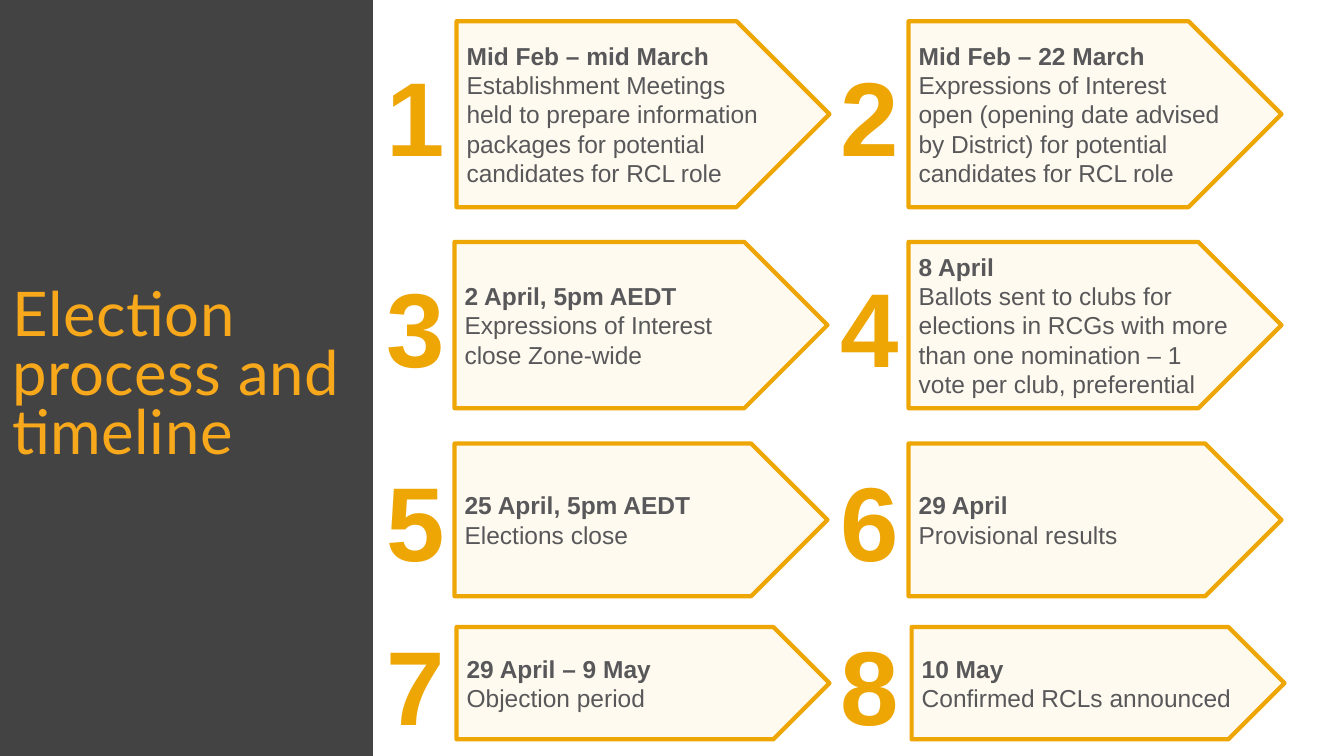
from dataclasses import dataclass

import pptx
import pptx.dml.color
import pptx.enum.shapes
import pptx.enum.text
import pptx.util

Inches = pptx.util.Inches
Align = pptx.enum.text.PP_ALIGN
Shape = pptx.enum.shapes.MSO_SHAPE


def rgb(code):
    return pptx.dml.color.RGBColor.from_string(code)


@dataclass(frozen=True)
class Theme:
    panel: str = "434343"
    title: str = "F7A81B"
    accent: str = "EEA604"
    arrow_fill: str = "FFFAEF"
    text: str = "58585A"
    title_font: str = "Lato"
    body_font: str = "Arial"
    title_size: int = 88
    number_size: int = 150
    body_size: int = 35
    outline: int = 6


@dataclass(frozen=True)
class Box:
    left: float
    top: float
    width: float
    height: float

    def lengths(self):
        return [Inches(n) for n in (self.left, self.top, self.width, self.height)]


@dataclass(frozen=True)
class Step:
    date: str
    detail: str
    indent: float = 1.56
    tracking: int = 0


THEME = Theme()
SLIDE_WIDTH, SLIDE_HEIGHT = 26.67, 15
PANEL_WIDTH = 7.4
ARROW_WIDTH = 7.4
NUMBER_WIDTH, NUMBER_HEIGHT = 1.57, 2.64
COLUMN_LEFTS = (7.46, 16.47)
ROWS = ((0.42, 3.69), (4.8, 3.3), (8.8, 3.03), (12.44, 2.23))  # top, height
STEPS = (
    Step("Mid Feb – mid March",
         "Establishment Meetings held to prepare information packages "
         "for potential candidates for RCL role", 1.6, -10),
    Step("Mid Feb – 22 March",
         "Expressions of Interest open (opening date advised by District) "
         "for potential candidates for RCL role", tracking=-10),
    Step("2 April, 5pm AEDT",
         "Expressions of Interest close Zone-wide", tracking=-10),
    Step("8 April",
         "Ballots sent to clubs for elections in RCGs with more than one "
         "nomination – 1 vote per club, preferential"),
    Step("25 April, 5pm AEDT", "Elections close"),
    Step("29 April", "Provisional results"),
    Step("29 April – 9 May", "Objection period", 1.6),
    Step("10 May", "Confirmed RCLs announced", 1.62),
)


def set_frame(frame, side, end):
    """Wrap and centre the text vertically, with side and top/bottom insets."""
    frame.word_wrap = True
    frame.vertical_anchor = pptx.enum.text.MSO_ANCHOR.MIDDLE
    frame.margin_left = frame.margin_right = Inches(side)
    frame.margin_top = frame.margin_bottom = Inches(end)


def write(para, text, font, size, color, bold=False, align=Align.LEFT, tracking=0):
    """Fill a paragraph; tracking is in hundredths of a point."""
    para.alignment = align
    span = para.add_run()
    span.text = text
    para.font.name = font
    para.font.size = pptx.util.Pt(size)
    para.font.bold = bold
    para.font.color.rgb = rgb(color)
    if tracking:
        span.font._element.set("spc", str(tracking))


def add_title_panel(page, box):
    panel = page.shapes.add_shape(Shape.RECTANGLE, *box.lengths())
    panel.shadow.inherit = False
    panel.fill.solid()
    panel.fill.fore_color.rgb = rgb(THEME.panel)
    panel.line.fill.background()

    height = 3.7
    top = box.top + (box.height - height) / 2
    title_box = Box(box.left, top, box.width, height)
    frame = page.shapes.add_textbox(*title_box.lengths()).text_frame
    set_frame(frame, 0.06, 0.06)
    para = frame.paragraphs[0]
    para._p.get_or_add_pPr().set("marL", str(Inches(0.19)))
    para.line_spacing = 0.8
    write(para, "Election process and timeline", THEME.title_font,
          THEME.title_size, THEME.title, tracking=90)


def add_number(page, box, number):
    frame = page.shapes.add_textbox(*box.lengths()).text_frame
    set_frame(frame, 0.06, 0.06)
    write(frame.paragraphs[0], str(number), THEME.body_font, THEME.number_size,
          THEME.accent, bold=True, align=Align.CENTER)


def add_arrow(page, box, step):
    arrow = page.shapes.add_shape(Shape.PENTAGON, *box.lengths())
    arrow.shadow.inherit = False
    arrow.fill.solid()
    arrow.fill.fore_color.rgb = rgb(THEME.arrow_fill)
    arrow.line.color.rgb = rgb(THEME.accent)
    arrow.line.width = pptx.util.Pt(THEME.outline)
    frame = arrow.text_frame
    set_frame(frame, 0.2, 0.79)
    write(frame.paragraphs[0], step.date, THEME.body_font, THEME.body_size,
          THEME.text, bold=True)
    write(frame.add_paragraph(), step.detail, THEME.body_font, THEME.body_size,
          THEME.text, tracking=step.tracking)


def add_step(page, box, number, step):
    """Place a number, centred on the row, and its arrow to the right."""
    number_top = box.top + (box.height - NUMBER_HEIGHT) / 2
    add_number(page, Box(box.left, number_top, NUMBER_WIDTH, NUMBER_HEIGHT), number)
    add_arrow(page, Box(box.left + step.indent, box.top, ARROW_WIDTH, box.height), step)


def main():
    deck = pptx.Presentation()
    deck.slide_width = Inches(SLIDE_WIDTH)
    deck.slide_height = Inches(SLIDE_HEIGHT)
    page = deck.slides.add_slide(deck.slide_layouts[6])
    add_title_panel(page, Box(0, 0, PANEL_WIDTH, SLIDE_HEIGHT))
    for index, step in enumerate(STEPS):
        row, column = divmod(index, len(COLUMN_LEFTS))
        top, height = ROWS[row]
        box = Box(COLUMN_LEFTS[column], top, step.indent + ARROW_WIDTH, height)
        add_step(page, box, index + 1, step)
    deck.save("out.pptx")


if __name__ == "__main__":
    main()
